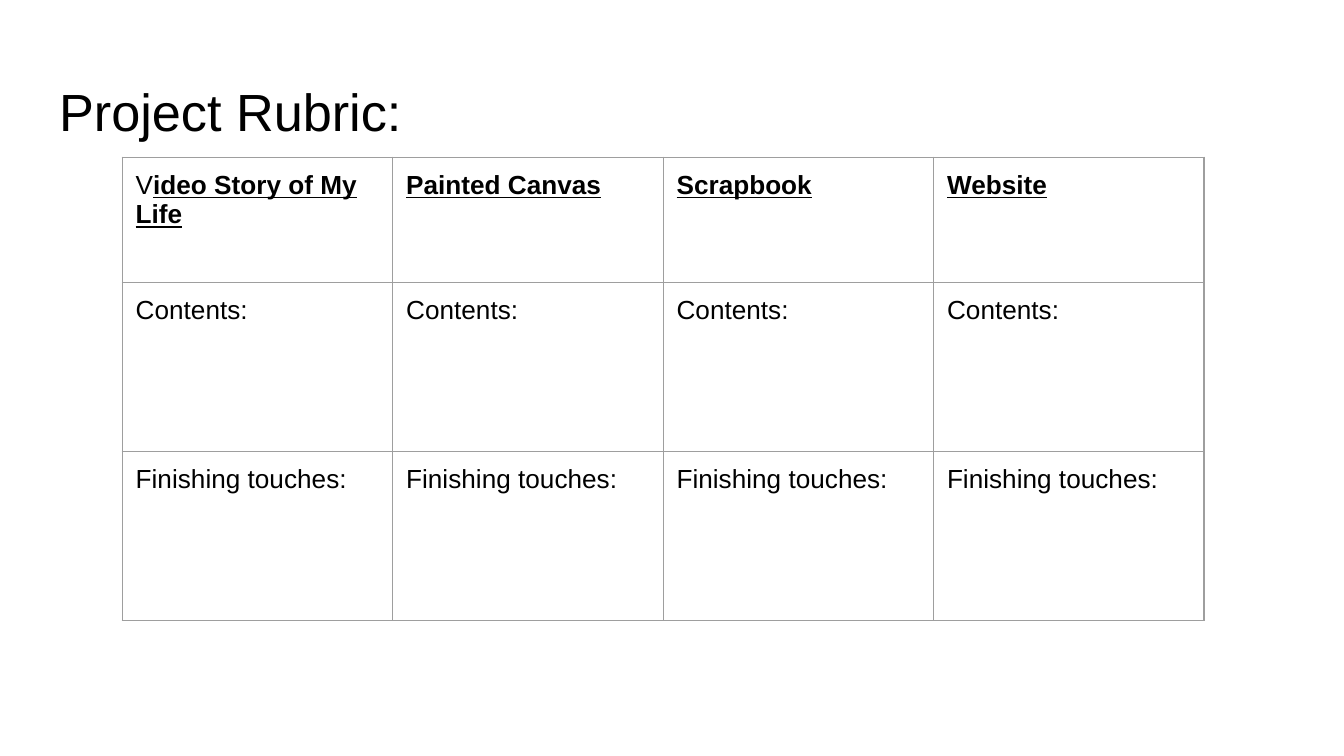
from dataclasses import dataclass

from lxml import etree
from pptx import Presentation
from pptx.dml.color import RGBColor
from pptx.enum.text import MSO_ANCHOR, PP_ALIGN
from pptx.oxml.ns import qn
from pptx.util import Inches, Pt

LEFT = PP_ALIGN.LEFT
TOP = MSO_ANCHOR.TOP
TITLE_ONLY = 5


@dataclass(frozen=True)
class Theme:
    font: str = "Arial"
    text: RGBColor = RGBColor(0, 0, 0)
    border: str = "9E9E9E"
    border_width: Pt = Pt(0.75)
    title_size: Pt = Pt(28)
    cell_size: Pt = Pt(14)
    inset: Inches = Inches(0.1)


THEME = Theme()


def style_text(holder, frame, size):
    """Format the text of a placeholder or cell; holder carries insets and anchor."""
    holder.margin_left = holder.margin_right = THEME.inset
    holder.margin_top = holder.margin_bottom = THEME.inset
    holder.vertical_anchor = TOP
    for paragraph in frame.paragraphs:
        paragraph.alignment = LEFT
        paragraph.font.name = THEME.font
        paragraph.font.size = size
        paragraph.font.color.rgb = THEME.text


def add_borders(cell):
    properties = cell._tc.get_or_add_tcPr()
    for position, side in enumerate(("lnL", "lnR", "lnT", "lnB")):
        line = etree.Element(qn(f"a:{side}"), w=str(THEME.border_width))
        fill = etree.SubElement(line, qn("a:solidFill"))
        etree.SubElement(fill, qn("a:srgbClr"), val=THEME.border)
        properties.insert(position, line)


prs = Presentation()
prs.slide_width = Inches(10)
prs.slide_height = prs.slide_width * 9 // 16
slide = prs.slides.add_slide(prs.slide_layouts[TITLE_ONLY])

title = slide.shapes.title
title.left, title.top = Inches(0.34), Inches(0.49)
title.width, title.height = Inches(9.32), Inches(0.63)
title.text_frame.text = "Project Rubric:"
style_text(title.text_frame, title.text_frame, THEME.title_size)

# Each heading is a plain lead-in followed by its bold, underlined part.
headings = [("V", "ideo Story of My Life"), ("", "Painted Canvas"),
            ("", "Scrapbook"), ("", "Website")]
criteria = ["Contents:", "Finishing touches:"]
table_width = Inches(8.05)
column_width = table_width // len(headings)
row_heights = [Inches(0.93), Inches(1.26), Inches(1.26)]

rubric = slide.shapes.add_table(
    len(row_heights), len(headings), Inches(0.91), Inches(1.17),
    table_width, sum(row_heights)).table
rubric.first_row = rubric.horz_banding = False
for row, height in zip(rubric.rows, row_heights):
    row.height = height

for col, (lead, emphasis) in enumerate(headings):
    rubric.columns[col].width = column_width
    heading = rubric.cell(0, col).text_frame.paragraphs[0]
    if lead:
        heading.add_run().text = lead
    emphasized = heading.add_run()
    emphasized.text = emphasis
    emphasized.font.bold = emphasized.font.underline = True
    for row, criterion in enumerate(criteria, start=1):
        rubric.cell(row, col).text = criterion

for cell in rubric.iter_cells():
    style_text(cell, cell.text_frame, THEME.cell_size)
    cell.fill.background()
    add_borders(cell)

prs.save("out.pptx")
